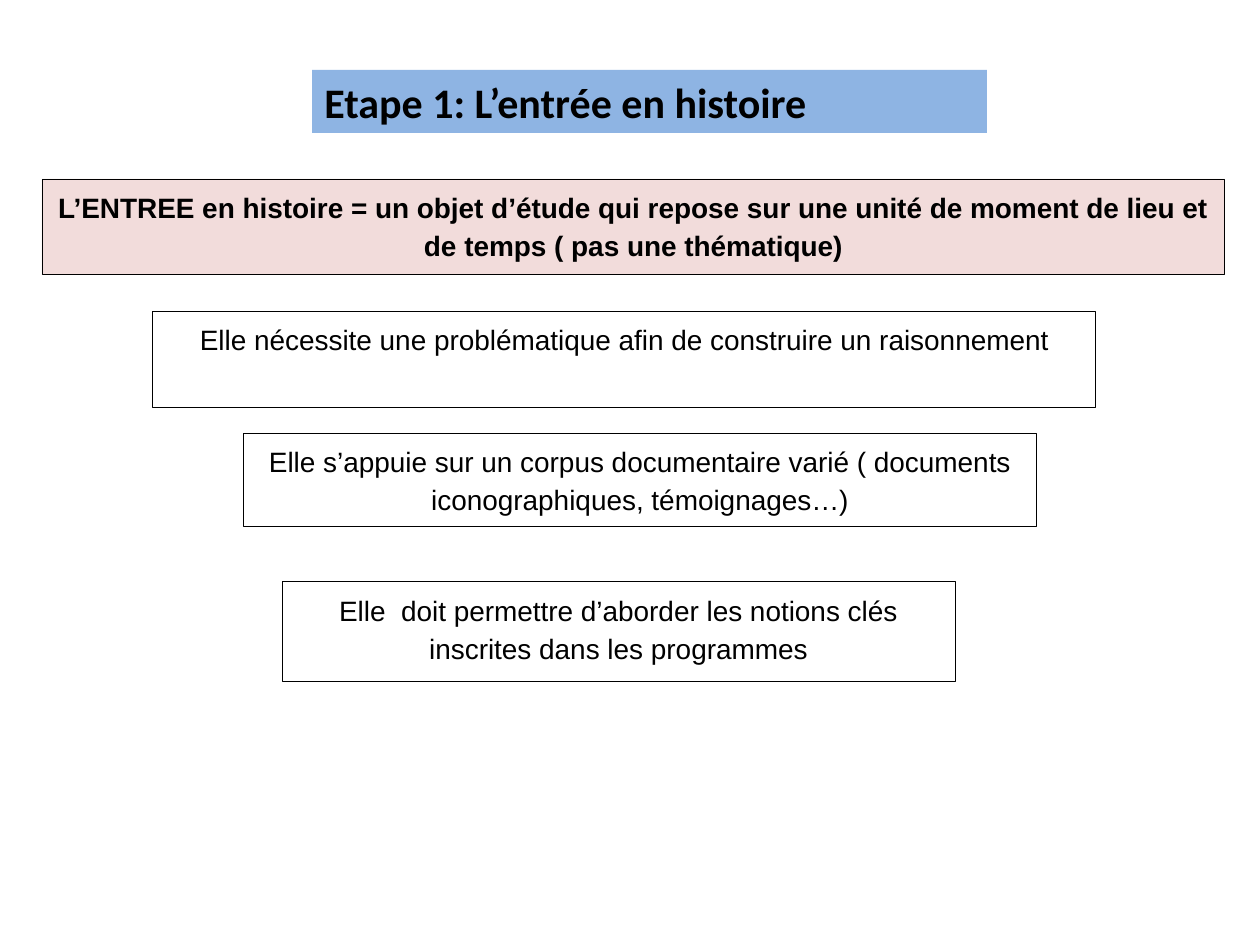
from dataclasses import dataclass

from pptx import Presentation
from pptx.dml.color import RGBColor
from pptx.enum.shapes import MSO_SHAPE
from pptx.enum.text import MSO_ANCHOR, PP_ALIGN
from pptx.util import Pt

RECTANGLE = MSO_SHAPE.RECTANGLE
TOP = MSO_ANCHOR.TOP
LEFT, CENTER = PP_ALIGN.LEFT, PP_ALIGN.CENTER
EMU_PER_PX = 914400 / 126


@dataclass(frozen=True)
class Theme:
    ink: str = "000000"
    title_fill: str = "8EB4E3"
    definition_fill: str = "F2DCDB"
    criterion_fill: str = "FFFFFF"
    title_font: str = "Calibri"
    body_font: str = "Arial"
    title_size: int = 24
    body_size: int = 16
    border_width: float = 0.5


THEME = Theme()


def px(length):
    return round(length * EMU_PER_PX)


def add_box(slide, box, fill, border=None):
    shape = slide.shapes.add_shape(RECTANGLE, *map(px, box))
    shape.shadow.inherit = False
    shape.fill.solid()
    shape.fill.fore_color.rgb = RGBColor.from_string(fill)
    if border:
        shape.line.color.rgb = RGBColor.from_string(border)
        shape.line.width = Pt(THEME.border_width)
    else:
        shape.line.fill.background()
    return shape


def write_text(shape, text, *, font, size, bold=False, align=LEFT,
               line_spacing=1.0, space_after=0):
    frame = shape.text_frame
    frame.word_wrap = True
    frame.vertical_anchor = TOP
    paragraph = frame.paragraphs[0]
    paragraph.alignment = align
    paragraph.line_spacing = line_spacing
    paragraph.space_after = Pt(space_after)
    run = paragraph.add_run()
    run.text = text
    run.font.name = font
    run.font.size = Pt(size)
    run.font.bold = bold
    run.font.color.rgb = RGBColor.from_string(THEME.ink)


def add_title(slide, box, text):
    shape = add_box(slide, box, THEME.title_fill)
    write_text(shape, text, font=THEME.title_font, size=THEME.title_size, bold=True)


def add_statement(slide, box, text, fill, bold=False):
    """Add a bordered box with one centred sentence."""
    shape = add_box(slide, box, fill, border=THEME.ink)
    write_text(shape, text, font=THEME.body_font, size=THEME.body_size, bold=bold,
               align=CENTER, line_spacing=1.15, space_after=10)


def main():
    presentation = Presentation()
    presentation.slide_width, presentation.slide_height = px(1260), px(945)
    slide = presentation.slides.add_slide(presentation.slide_layouts[6])

    add_statement(
        slide, (42, 179, 1183, 96),
        "L’ENTREE en histoire = un objet d’étude qui repose sur une unité "
        "de moment de lieu et de temps ( pas une thématique)",
        THEME.definition_fill, bold=True)

    criteria = [
        ((153, 311, 943, 97),
         "Elle nécessite une problématique afin de construire un raisonnement"),
        ((243, 433, 794, 93),
         "Elle s’appuie sur un corpus documentaire varié "
         "( documents iconographiques, témoignages…)"),
        ((282, 582, 673, 100),
         "Elle  doit permettre d’aborder les notions clés "
         "inscrites dans les programmes"),
    ]
    for box, text in criteria:
        add_statement(slide, box, text, THEME.criterion_fill)

    add_title(slide, (312, 70, 675, 63), "Etape 1: L’entrée en histoire")
    presentation.save("out.pptx")


if __name__ == "__main__":
    main()
